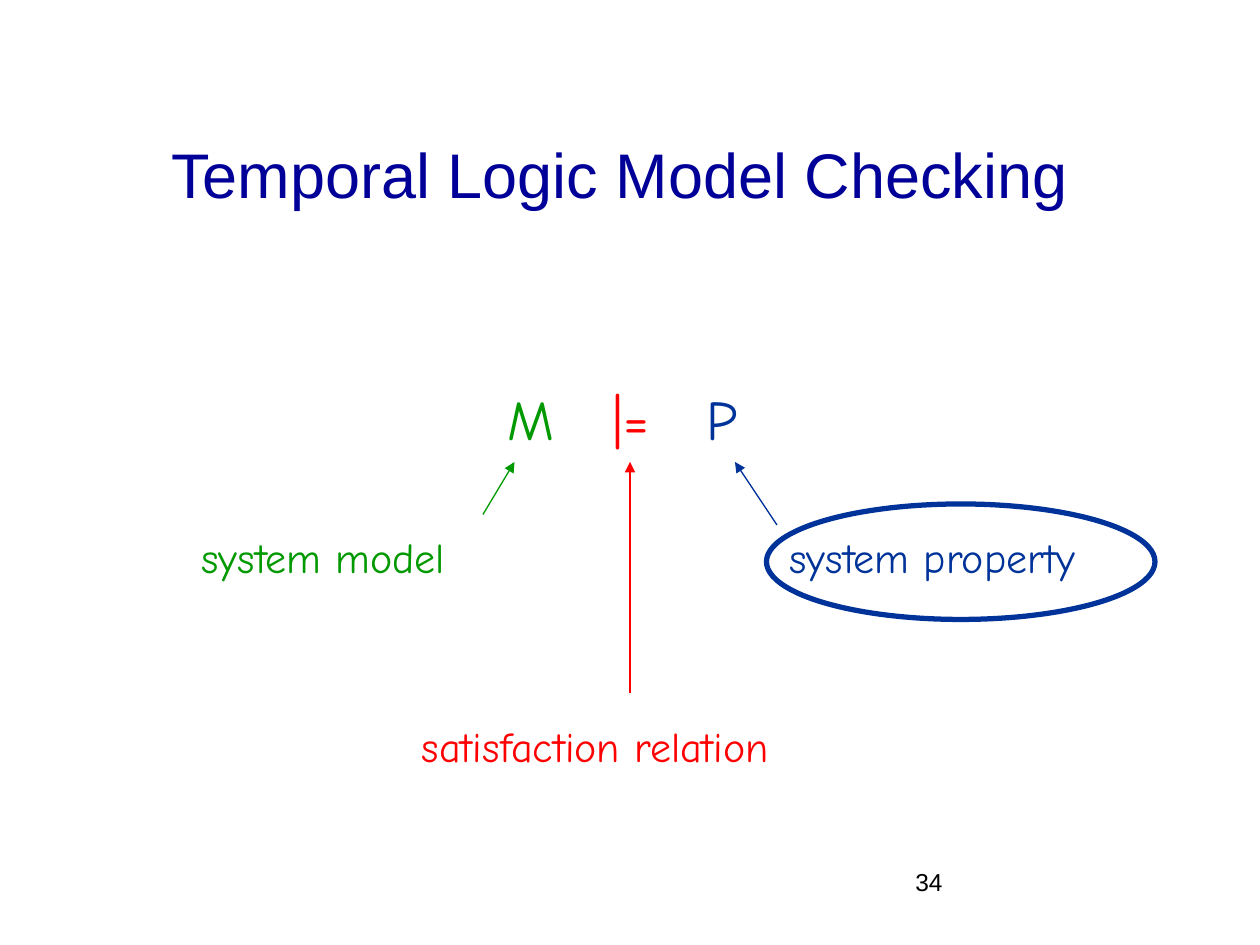
"""Build the slide on temporal logic model checking."""
from pptx import Presentation
from pptx.dml.color import RGBColor
from pptx.enum.shapes import MSO_CONNECTOR, MSO_SHAPE
from pptx.enum.text import MSO_ANCHOR, PP_ALIGN
from pptx.oxml.ns import qn
from pptx.util import Pt
from lxml.etree import SubElement

THEME = {
    "title": "000099", "number": "000000",
    "model": "009900", "relation": "FF0000", "property": "003399",
    "heading_font": "Arial", "body_font": "Comic Neue",
    "title_size": 36, "formula_size": 32, "label_size": 24, "number_size": 14,
    "arrow_width": 0.75, "ring_width": 3,
}
TITLE = ("Temporal Logic Model Checking", (48, 54, 612, 90))
PAGE_NUMBER = ("34", (516, 492, 150, 36))
FORMULA = [("M", "model"), ("|=", "relation"), ("P", "property")]
FORMULA_BOX = (210, 216, 294, 45)
FORMULA_INDENT = 80
FORMULA_STOPS = [60, 113.5]
LABELS = [
    ("system model", "model", (108, 300, 186, 36)),
    ("system property", "property", (444, 300, 228, 36)),
    ("satisfaction relation", "relation", (234, 408, 264, 36)),
]
ARROWS = [
    ("relation", (360, 396), (360, 264)),
    ("model", (276, 294), (294, 264)),
    ("property", (444, 300), (420, 264)),
]
RING = ("property", (438, 288, 222, 66))


def points(values):
    return [Pt(value) for value in values]


def color(role):
    return RGBColor.from_string(THEME[role])


def apply_format(target, values):
    for name, value in values.items():
        setattr(target, name, value)


def add_text(slide, pieces, place, font, size, stops=(), align=PP_ALIGN.LEFT, **frame_format):
    frame = slide.shapes.add_textbox(*points(place)).text_frame
    apply_format(frame, {"word_wrap": True, **frame_format})
    paragraph = frame.paragraphs[0]
    paragraph.alignment = align
    if stops:
        tab_list = SubElement(paragraph._p.get_or_add_pPr(), qn("a:tabLst"))
        for stop in stops:
            SubElement(tab_list, qn("a:tab"), pos=str(Pt(stop)), algn="l")
    for index, (words, role) in enumerate(pieces):
        run = paragraph.add_run()
        run.text = "\t" + words if index else words
        apply_format(run.font, {"name": THEME[font], "size": Pt(THEME[size])})
        run.font.color.rgb = color(role)


def add_arrow(slide, role, start, end):
    arrow = slide.shapes.add_connector(MSO_CONNECTOR.STRAIGHT, *points(start + end))
    arrow.line.color.rgb = color(role)
    arrow.line.width = Pt(THEME["arrow_width"])
    SubElement(arrow.line._get_or_add_ln(), qn("a:tailEnd"), type="triangle")
    SubElement(arrow._element.spPr, qn("a:effectLst"))


def add_ring(slide, role, place):
    ring = slide.shapes.add_shape(MSO_SHAPE.OVAL, *points(place))
    ring.shadow.inherit = False
    ring.fill.background()
    ring.line.color.rgb = color(role)
    ring.line.width = Pt(THEME["ring_width"])


def main():
    deck = Presentation()
    apply_format(deck, {"slide_width": Pt(720), "slide_height": Pt(540)})
    slide = deck.slides.add_slide(deck.slide_layouts[6])
    number, number_box = PAGE_NUMBER
    add_text(slide, [(number, "number")], number_box, "heading_font", "number_size")
    add_text(slide, FORMULA, FORMULA_BOX, "body_font", "formula_size",
             stops=FORMULA_STOPS, margin_left=Pt(FORMULA_INDENT))
    for words, role, place in LABELS:
        add_text(slide, [(words, role)], place, "body_font", "label_size")
    for arrow in ARROWS:
        add_arrow(slide, *arrow)
    add_ring(slide, *RING)
    title, title_box = TITLE
    add_text(slide, [(title, "title")], title_box, "heading_font", "title_size",
             align=PP_ALIGN.CENTER, vertical_anchor=MSO_ANCHOR.MIDDLE)
    deck.save("out.pptx")


if __name__ == "__main__":
    main()
